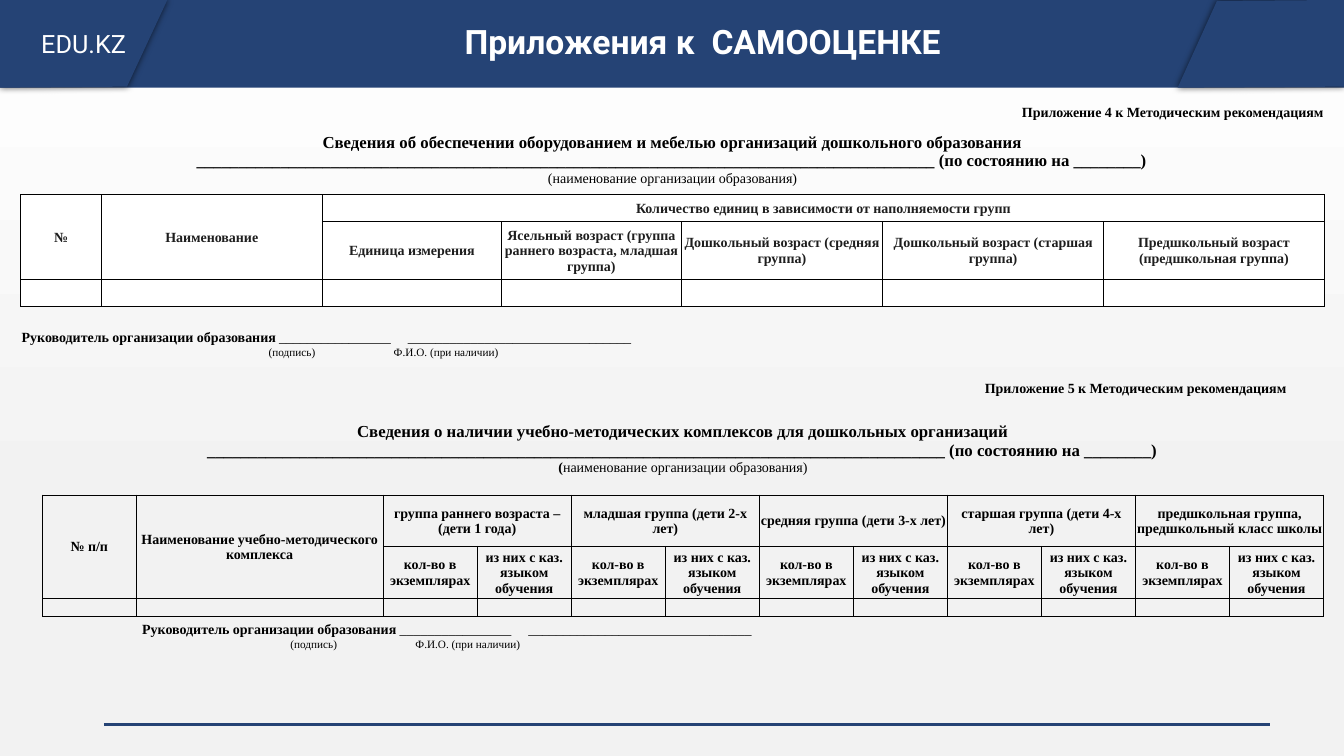
from dataclasses import dataclass

from lxml import etree
from pptx import Presentation
from pptx import util as u
from pptx.dml.color import RGBColor
from pptx.enum import shapes, text
from pptx.oxml import ns

# The slide is a grid of 1333 columns by 750 rows
UNIT = u.Inches(0.01)
COLUMNS, ROWS = 1333, 750
BAND = 87
LEFT, CENTER, RIGHT = text.PP_ALIGN.LEFT, text.PP_ALIGN.CENTER, text.PP_ALIGN.RIGHT
MIDDLE, BOTTOM, TOP = text.MSO_ANCHOR.MIDDLE, text.MSO_ANCHOR.BOTTOM, text.MSO_ANCHOR.TOP


@dataclass(frozen=True)
class Theme:
    navy: str = "254375"
    white: str = "FFFFFF"
    pale: str = "F2F2F2"
    black: str = "000000"
    ink: str = "1E1E1E"
    sans: str = "Roboto"
    serif: str = "Times New Roman"
    title: int = 24
    label: int = 18
    heading: int = 12
    body: int = 10
    small: int = 8
    rule: float = 2.25
    border: float = 0.5


THEME = Theme()


def grid(*lengths):
    return [round(length * UNIT) for length in lengths]


def rgb(value):
    return RGBColor.from_string(value)


def add_child(parent, tag, **attributes):
    return etree.SubElement(parent, ns.qn(tag), **attributes)


def style(font, size, color, bold=True, name=THEME.serif):
    font.name, font.size, font.bold = name, u.Pt(size), bold
    font.color.rgb = rgb(color)


# Header band
def paint(shape):
    shape.shadow.inherit = False
    shape.fill.solid()
    shape.fill.fore_color.rgb = rgb(THEME.navy)
    shape.line.fill.background()


def add_flap(page, points):
    builder = page.shapes.build_freeform(*points[0], scale=UNIT)
    builder.add_line_segments(points[1:], close=True)
    flap = builder.convert_to_shape()
    paint(flap)
    effects = flap._element.spPr.find(ns.qn("a:effectLst"))
    shadow = add_child(effects, "a:outerShdw", blurRad=str(u.Pt(5)), dist="0", dir="0")
    color = add_child(shadow, "a:srgbClr", val=THEME.black)
    add_child(color, "a:alpha", val="60000")
    return flap


def add_header(page):
    paint(page.shapes.add_shape(shapes.MSO_SHAPE.RECTANGLE, *grid(0, 0, COLUMNS, BAND)))
    label = add_flap(page, [(0, 0), (0, BAND), (126, 86), (166, 0)]).text_frame
    label.vertical_anchor = MIDDLE
    para = label.paragraphs[0]
    para.text, para.alignment = "EDU.KZ", CENTER
    style(para.font, THEME.label, THEME.white, False, THEME.sans)
    add_flap(page, [(COLUMNS, 86), (COLUMNS, 0), (1207, 1), (1168, BAND)])


def add_title(page, words):
    title = page.shapes.title
    title.left, title.top, title.width, title.height = grid(147, 13, 1100, 49)
    frame = title.text_frame
    frame.vertical_anchor, frame.auto_size = TOP, text.MSO_AUTO_SIZE.NONE
    para = frame.paragraphs[0]
    para.text, para.alignment = words, CENTER
    para.line_spacing, para.space_after = 1.07, u.Pt(8)
    style(para.font, THEME.title, THEME.white, True, THEME.sans)
    page.shapes._spTree.append(title._element)  # in front of the band


def add_rule(page):
    start_x, y, end_x = grid(103, 719, 1260)
    rule = page.shapes.add_connector(shapes.MSO_CONNECTOR.STRAIGHT, start_x, y, end_x, y)
    rule.line.color.rgb, rule.line.width = rgb(THEME.navy), u.Pt(THEME.rule)
    add_child(rule._element.spPr, "a:effectLst")


# Tables
def add_form(page, left, top, columns, rows):
    place = grid(left, top, sum(columns), sum(rows))
    table = page.shapes.add_table(len(rows), len(columns), *place).table
    table.first_row = table.horz_banding = False
    table._tbl.tblPr[0].text = "{2D5ABB26-0587-4C30-8999-92F81FD0307C}"  # no style, no grid
    for column, width in zip(table.columns, grid(*columns)):
        column.width = width
    for row, height in zip(table.rows, grid(*rows)):
        row.height = height
    for cell in table.iter_cells():
        cell.margin_left, cell.margin_top, cell.margin_right, cell.margin_bottom = grid(1, 1, 1, 0)
        cell.fill.background()
        end = cell.text_frame.paragraphs[0]._p.get_or_add_endParaRPr()
        end.set("sz", str(THEME.small * 100))
    return table


def rule_cells(table, first, last, fill=None):
    for row in range(first, last + 1):
        for column in range(len(table.columns)):
            cell = table.cell(row, column)
            if fill:
                cell.fill.solid()
                cell.fill.fore_color.rgb = rgb(fill)
            properties = cell._tc.get_or_add_tcPr()
            for index, side in enumerate(("a:lnL", "a:lnR", "a:lnT", "a:lnB")):
                line = add_child(properties, side, w=str(u.Pt(THEME.border)))
                add_child(add_child(line, "a:solidFill"), "a:srgbClr", val=THEME.black)
                properties.insert(index, line)


def open_cell(table, row, column, span=(1, 1), align=CENTER, anchor=MIDDLE):
    cell = table.cell(row, column)
    if span != (1, 1):
        cell.merge(table.cell(row + span[0] - 1, column + span[1] - 1))
    cell.vertical_anchor = anchor
    para = cell.text_frame.paragraphs[0]
    para.alignment = align
    return para


def write(table, row, column, words, span=(1, 1), color=THEME.black, align=CENTER):
    para = open_cell(table, row, column, span, align)
    para.text = words
    style(para.font, THEME.body, color)


def add_span(para, words, size, bold):
    span = para.add_run()
    span.text = words
    style(span.font, size, THEME.black, bold)


def write_heading(table, row, words, anchor, bracket_bold):
    para = open_cell(table, row, 0, (1, len(table.columns)), CENTER, anchor)
    for line in (words, "_" * 88 + " (по состоянию на ________)"):
        add_span(para, line, THEME.heading, True)
        para.add_line_break()
    add_span(para, "(", THEME.body, bracket_bold)
    add_span(para, "наименование организации образования)", THEME.body, False)


def set_tabs(para, *positions):
    tabs = add_child(para._p.get_or_add_pPr(), "a:tabLst")
    for position in grid(*positions):
        add_child(tabs, "a:tab", pos=str(position), algn="l")


def write_signature(table, row, indent, columns):
    para = open_cell(table, row, 0, (1, columns), LEFT, BOTTOM)
    stops = [indent] if indent else []
    set_tabs(para, *stops, 383 + indent)
    add_span(para, "\t" * len(stops) + "Руководитель организации образования ", THEME.body, True)
    add_span(para, "_" * 16 + "\t" + "_" * 32, THEME.body, False)
    para = open_cell(table, row + 1, 0, (1, 5), LEFT, TOP)
    set_tabs(para, 245, 369)
    para.text = "\t(подпись)\tФ.И.О. (при наличии)"
    style(para.font, THEME.small, THEME.black, False)


def add_equipment(page):
    table = add_form(page, 20.5, 100, [80, 219, 178, 178, 200, 219, 219],
                     [23, 70, 27, 57, 27, 20, 19, 18])
    rule_cells(table, 2, 4, THEME.white)
    write(table, 0, 5, "Приложение 4 к Методическим рекомендациям", (1, 2), align=RIGHT)
    write_heading(table, 1, "Сведения об обеспечении оборудованием и мебелью "
                  "организаций дошкольного образования", MIDDLE, False)
    for column, words in enumerate(("№", "Наименование")):
        write(table, 2, column, words, (2, 1), THEME.ink)
    write(table, 2, 2, "Количество единиц в зависимости от наполняемости групп", (1, 5), THEME.ink)
    ages = ("Единица измерения", "Ясельный возраст (группа раннего возраста, младшая группа)",
            "Дошкольный возраст (средняя группа)", "Дошкольный возраст (старшая группа)",
            "Предшкольный возраст (предшкольная группа)")
    for column, words in enumerate(ages, 2):
        write(table, 3, column, words, color=THEME.ink)
    write_signature(table, 6, 0, 6)


def add_kits(page):
    groups = ("группа раннего возраста – (дети 1 года)", "младшая группа (дети 2-х лет)",
              "средняя группа (дети 3-х лет)", "старшая группа (дети 4-х лет)",
              "предшкольная группа, предшкольный класс школы")
    table = add_form(page, 42, 375, [93, 245] + [93.3] * 2 * len(groups),
                     [21, 19, 57, 19, 51, 52, 18, 21, 22])
    rule_cells(table, 4, 6)
    write(table, 0, 8, "Приложение 5 к Методическим рекомендациям", (1, 4))
    write_heading(table, 2, "Сведения о наличии учебно-методических комплексов "
                  "для дошкольных организаций", BOTTOM, True)
    for column, words in enumerate(("№ п/п", "Наименование учебно-методического комплекса")):
        write(table, 4, column, words, (2, 1))
    for index, group in enumerate(groups):
        column = 2 + 2 * index
        write(table, 4, column, group, (1, 2))
        write(table, 5, column, "кол-во в экземплярах")
        write(table, 5, column + 1, "из них с каз. языком обучения")
    write_signature(table, 7, 98, 7)


def main():
    deck = Presentation()
    deck.slide_width, deck.slide_height = grid(COLUMNS, ROWS)
    page = deck.slides.add_slide(deck.slide_layouts[5])
    # Background
    backdrop = page.background.fill
    backdrop.gradient()
    backdrop.gradient_angle = 270
    for stop, color, position in zip(backdrop.gradient_stops, (THEME.white, THEME.pale), (0, 0.68)):
        stop.color.rgb, stop.position = rgb(color), position
    # Content
    add_header(page)
    add_title(page, "Приложения к  САМООЦЕНКЕ")
    add_rule(page)
    add_equipment(page)
    add_kits(page)
    deck.save("out.pptx")


if __name__ == "__main__":
    main()
